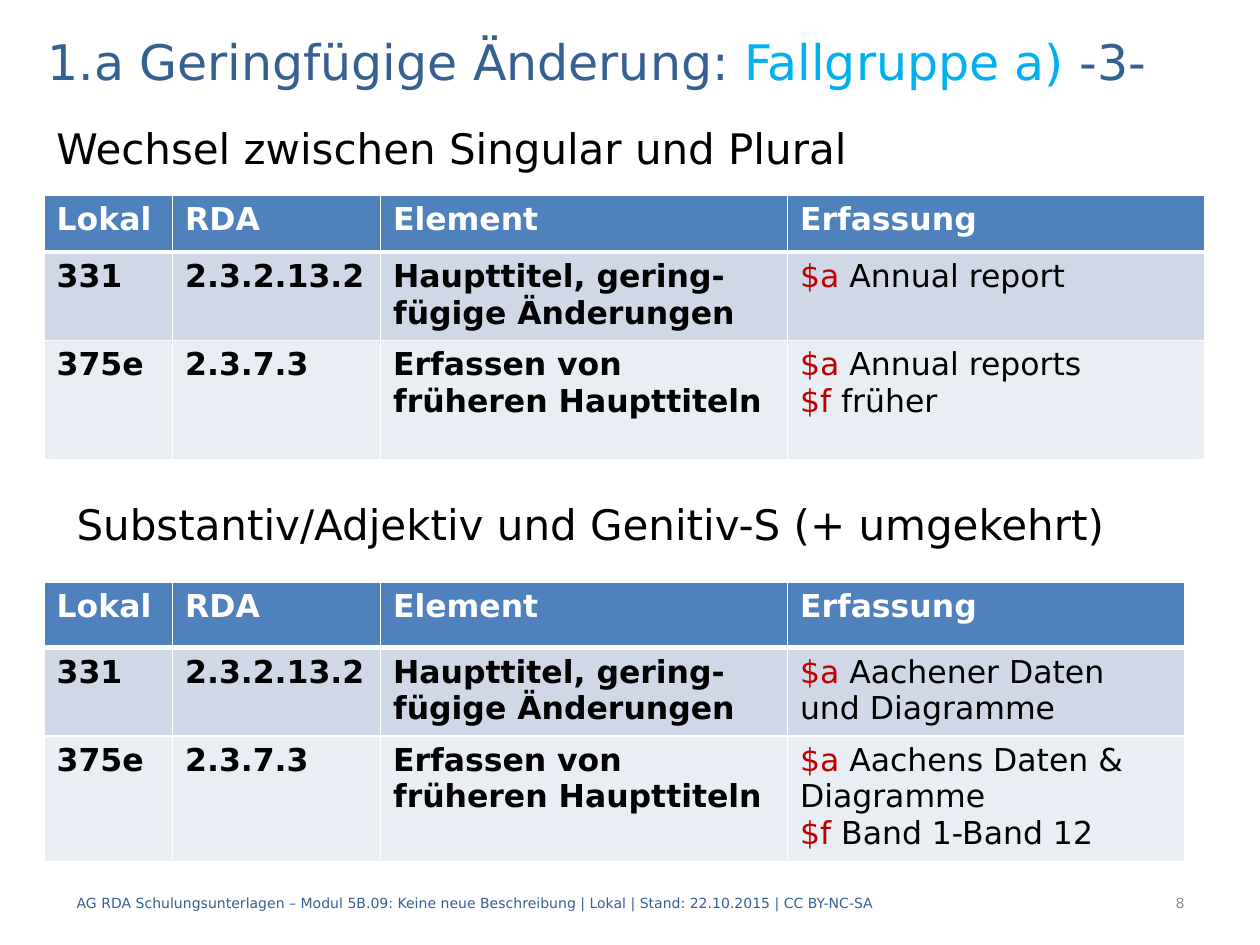
from lxml import etree
from pptx import Presentation
from pptx.dml.color import RGBColor
from pptx.enum.text import MSO_ANCHOR as Anchor, PP_ALIGN as Align
from pptx.oxml.ns import qn
from pptx.util import Inches, Pt

FONT = "DejaVu Sans"
NAVY, CYAN, GRAY = "376092", "00B0F0", "8C8C8C"
BLACK, WHITE, RED = "000000", "FFFFFF", "C00000"
FILLS = ["4F81BD", "D0D8E8", "E9EDF4"]
HEAD = ["Lokal", "RDA", "Element", "Erfassung"]
NEW = ["331", "2.3.2.13.2", "Haupttitel, gering-fügige Änderungen"]
OLD = ["375e", "2.3.7.3", "Erfassen von früheren Haupttiteln"]


def color(code):
    return RGBColor.from_string(code)


def add_runs(para, runs, size, bold=False):
    for text, code in runs:
        run = para.add_run()
        run.text = text
        font = run.font
        font.name, font.size, font.bold = FONT, Pt(size), bold
        font.color.rgb = color(code)


def add_text(slide, box, runs, size, anchor=Anchor.TOP, align=Align.LEFT):
    frame = slide.shapes.add_textbox(*map(Inches, box)).text_frame
    frame.word_wrap = True
    frame.vertical_anchor = anchor
    para = frame.paragraphs[0]
    para.alignment = align
    add_runs(para, runs, size)


def add_edges(cell, top, bottom):
    props = cell._tc.get_or_add_tcPr()
    widths = {"a:lnL": 1, "a:lnR": 1, "a:lnT": top, "a:lnB": bottom}
    for i, (tag, width) in enumerate(widths.items()):
        line = etree.Element(qn(tag), w=str(Pt(width)))
        fill = etree.SubElement(line, qn("a:solidFill"))
        etree.SubElement(fill, qn("a:srgbClr"), val=WHITE)
        props.insert(i, line)


def fill_cell(cell, row, paras, bold):
    cell.fill.solid()
    cell.fill.fore_color.rgb = color(FILLS[row])
    frame = cell.text_frame
    for i, runs in enumerate(paras):
        para = frame.add_paragraph() if i else frame.paragraphs[0]
        add_runs(para, runs, 18, bold)
    add_edges(cell, 3 if row == 1 else 1, 3 if row == 0 else 1)


def add_grid(slide, top, last, heights, title, former):
    """Draw one table; title and former list (subfield, text) pairs."""
    widths = [1.02, 1.65, 3.23, last]
    box = map(Inches, (0.35, top, sum(widths), sum(heights)))
    table = slide.shapes.add_table(3, 4, *box).table
    for col, width in zip(table.columns, widths):
        col.width = Inches(width)
    for row, height in zip(table.rows, heights):
        row.height = Inches(height)

    # Labels in bold
    for r, labels in enumerate([HEAD, NEW, OLD]):
        for c, text in enumerate(labels):
            code = BLACK if r else WHITE
            fill_cell(table.cell(r, c), r, [[(text, code)]], True)

    # Recorded values with red subfield codes
    for r, pairs in enumerate([title, former], 1):
        paras = [[(sub + " ", RED), (text, BLACK)] for sub, text in pairs]
        fill_cell(table.cell(r, 3), r, paras, False)


def main():
    deck = Presentation()
    deck.slide_width, deck.slide_height = Inches(10), Inches(7.5)
    slide = deck.slides.add_slide(deck.slide_layouts[6])

    # Title
    add_text(slide, (0.28, 0.2, 9.45, 0.56),
             [("1.a Geringfügige Änderung: ", NAVY),
              ("Fallgruppe a) ", CYAN), ("-3-", NAVY)], 28, Anchor.MIDDLE)

    # Singular and plural
    add_text(slide, (0.35, 0.92, 9.13, 0.5),
             [("Wechsel zwischen Singular und Plural", BLACK)], 24)
    add_grid(slide, 1.55, 3.31, [0.45, 0.65, 0.95],
             [("$a", "Annual report")],
             [("$a", "Annual reports"), ("$f", "früher")])

    # Genitive
    add_text(slide, (0.51, 3.91, 9.06, 0.5),
             [("Substantiv/Adjektiv und Genitiv-S (+ umgekehrt)", BLACK)], 24)
    add_grid(slide, 4.62, 3.15, [0.52, 0.67, 0.77],
             [("$a", "Aachener Daten und Diagramme")],
             [("$a", "Aachens Daten & Diagramme"), ("$f", "Band 1-Band 12")])

    # Footer
    note = ("AG RDA Schulungsunterlagen – Modul 5B.09: Keine neue "
            "Beschreibung | Lokal | Stand: 22.10.2015 | CC BY-NC-SA")
    add_text(slide, (0.51, 6.97, 7.8, 0.4), [(note, NAVY)], 8, Anchor.MIDDLE)
    add_text(slide, (7.91, 6.97, 1.59, 0.4), [("8", GRAY)], 8,
             Anchor.MIDDLE, Align.RIGHT)

    deck.save("out.pptx")


if __name__ == "__main__":
    main()
